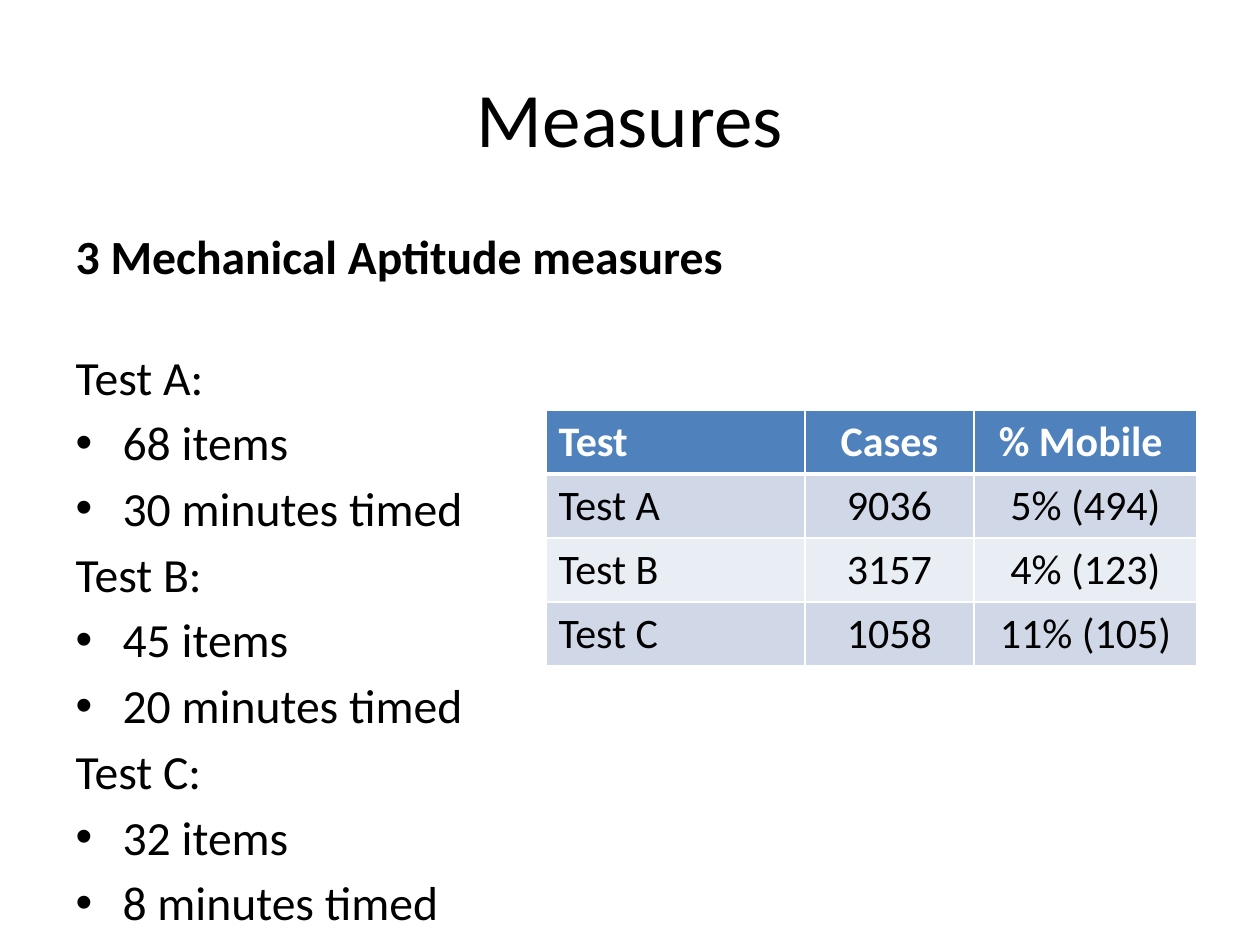
from lxml.etree import SubElement
from pptx import Presentation
from pptx.dml.color import RGBColor
from pptx.enum.text import MSO_ANCHOR, MSO_AUTO_SIZE, PP_ALIGN
from pptx.oxml.ns import qn
from pptx.util import Emu, Pt

PX_PER_INCH = 126
COLORS = {
    "text": "000000",
    "white": "FFFFFF",
    "header": "4F81BD",
    "band_dark": "D0D8E8",
    "band_light": "E9EDF4",
}
TESTS = {
    "Test A:": ["68 items", "30 minutes timed"],
    "Test B:": ["45 items", "20 minutes timed"],
    "Test C:": ["32 items", "8 minutes timed"],
}
CASES = [
    ["Test", "Cases", "% Mobile "],
    ["Test A", "9036", "5% (494)"],
    ["Test B", "3157", "4% (123)"],
    ["Test C", "1058", "11% (105)"],
]


def px(length):
    return Emu(round(length * 914400 / PX_PER_INCH))


def rgb(name):
    return RGBColor.from_string(COLORS[name])


def write(paragraph, text, size, color="text", bold=False, align=PP_ALIGN.LEFT, before=0):
    paragraph.alignment = align
    paragraph.space_before = Pt(before)
    run = paragraph.add_run()
    run.text = text
    run.font.name = "Calibri"
    run.font.size = Pt(size)
    run.font.bold = bold
    run.font.color.rgb = rgb(color)


class SlideBuilder:
    body_size = 27.2
    line_gap = 4.9
    section_gap = 36
    table_size = 24

    def __init__(self, slide):
        self.slide = slide

    def place(self, placeholder, left, top, width, height):
        placeholder.left, placeholder.top = px(left), px(top)
        placeholder.width, placeholder.height = px(width), px(height)
        frame = placeholder.text_frame
        frame.word_wrap = True
        frame.auto_size = MSO_AUTO_SIZE.NONE
        return frame

    def title(self, text, *box):
        frame = self.place(self.slide.shapes.title, *box)
        frame.vertical_anchor = MSO_ANCHOR.MIDDLE
        write(frame.paragraphs[0], text, 44, align=PP_ALIGN.CENTER)

    def body(self, heading, sections, *box):
        frame = self.place(self.slide.placeholders[1], *box)
        frame.vertical_anchor = MSO_ANCHOR.TOP
        self.bullet(frame.paragraphs[0], None)
        write(frame.paragraphs[0], heading, self.body_size, bold=True)
        for index, (section, items) in enumerate(sections.items()):
            gap = self.line_gap if index else self.section_gap
            for mark, text in [(None, section)] + [("•", item) for item in items]:
                paragraph = frame.add_paragraph()
                self.bullet(paragraph, mark)
                write(paragraph, text, self.body_size, before=gap)
                gap = self.line_gap

    def bullet(self, paragraph, mark):
        properties = paragraph._p.get_or_add_pPr()
        indent = px(47) if mark else 0
        properties.set("marL", str(indent))
        properties.set("indent", str(-indent))
        if mark:
            SubElement(properties, qn("a:buChar"), char=mark)
        else:
            SubElement(properties, qn("a:buNone"))

    def table(self, rows, left, top, widths, row_height):
        table = self.slide.shapes.add_table(
            len(rows), len(widths), px(left), px(top),
            px(sum(widths)), px(row_height * len(rows))).table
        for column, width in zip(table.columns, widths):
            column.width = px(width)
        for r, row in enumerate(rows):
            table.rows[r].height = px(row_height)
            fill = "header" if r == 0 else ("band_light", "band_dark")[r % 2]
            for c, text in enumerate(row):
                cell = table.cell(r, c)
                # The line under the header is thicker than the rest
                self.borders(cell, top=3 if r == 1 else 1, bottom=3 if r == 0 else 1)
                cell.fill.solid()
                cell.fill.fore_color.rgb = rgb(fill)
                write(cell.text_frame.paragraphs[0], text, self.table_size,
                      color="text" if r else "white", bold=r == 0,
                      align=PP_ALIGN.CENTER if c else PP_ALIGN.LEFT)

    def borders(self, cell, top, bottom):
        properties = cell._tc.get_or_add_tcPr()
        for side, width in (("L", 1), ("R", 1), ("T", top), ("B", bottom)):
            line = SubElement(properties, qn(f"a:ln{side}"), w=str(Pt(width)))
            fill = SubElement(line, qn("a:solidFill"))
            SubElement(fill, qn("a:srgbClr"), val=COLORS["white"])


def main():
    deck = Presentation()
    deck.slide_width, deck.slide_height = px(1260), px(945)
    measures = SlideBuilder(deck.slides.add_slide(deck.slide_layouts[1]))

    # Title
    measures.title("Measures", 63, 38, 1134, 157)
    # Test descriptions
    measures.body("3 Mechanical Aptitude measures", TESTS, 63, 221, 1134, 624)
    # Cases per test
    measures.table(CASES, 546, 410, [259, 169, 223], 64)

    deck.save("out.pptx")


if __name__ == "__main__":
    main()
